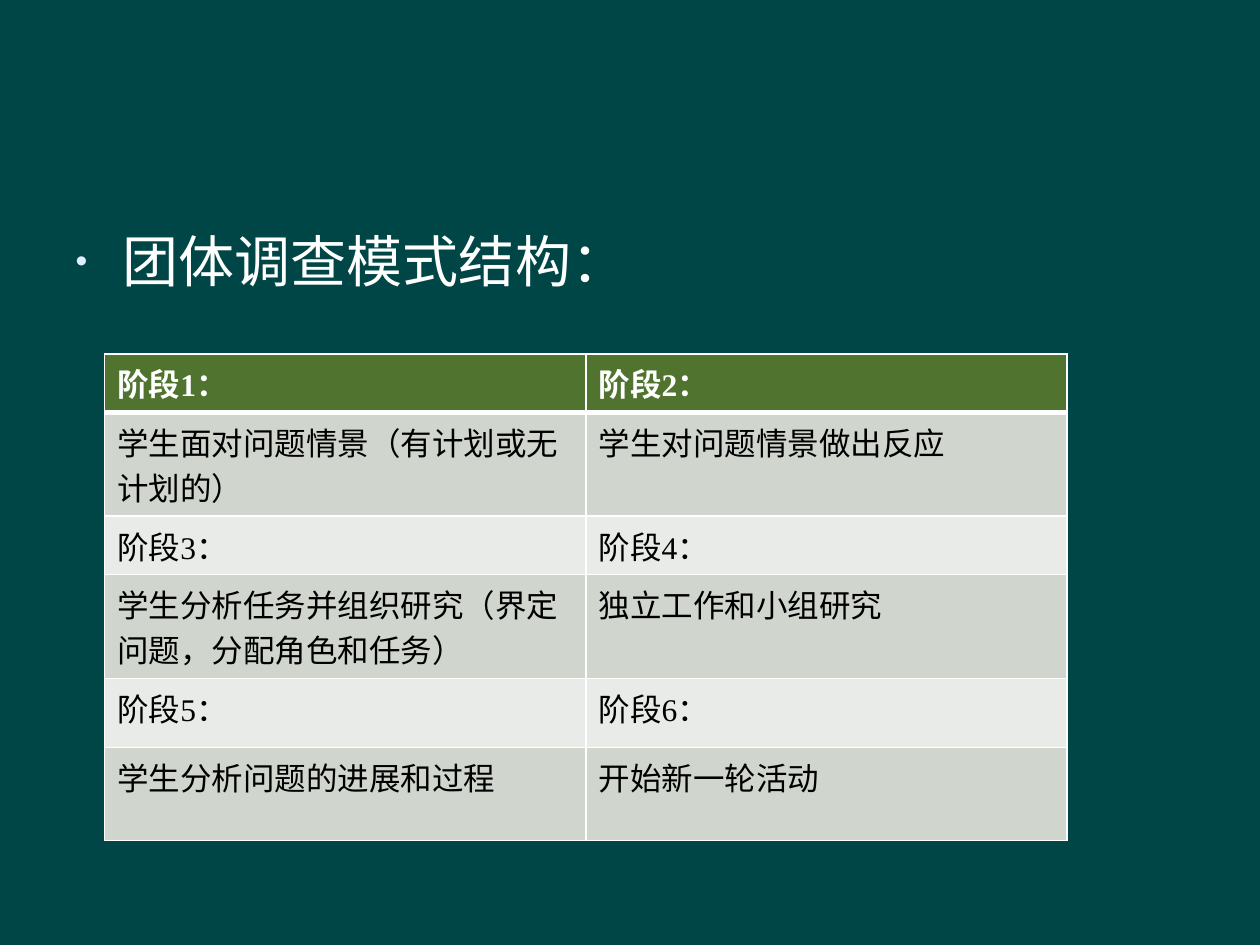
import pptx
import pptx.util
import pptx.dml.color
import pptx.oxml
import pptx.oxml.ns

Pt = pptx.util.Pt
FACE = "Times New Roman"
HUES = {"back": "004646", "white": "FFFFFF", "black": "000000", "dot": "E1F0FF",
        "head": "50742F", "dark": "D0D6CD", "light": "E9EBE8"}
ROWS = [
    ("阶段1：", "阶段2："),
    ("学生面对问题情景（有计划或无计划的）", "学生对问题情景做出反应"),
    ("阶段3：", "阶段4："),
    ("学生分析任务并组织研究（界定问题，分配角色和任务）", "独立工作和小组研究"),
    ("阶段5：", "阶段6："),
    ("学生分析问题的进展和过程", "开始新一轮活动"),
]
HEIGHTS = [33, 59.4, 33, 59.4, 39.4, 53.2]


def tint(name):
    return pptx.dml.color.RGBColor.from_string(HUES[name])


def make(xml):
    ns = pptx.oxml.ns.nsdecls("a")
    return pptx.oxml.parse_xml(xml.replace(">", f" {ns}>", 1))


def style(para, size, hue, bold=False):
    font = para.font
    font.name, font.size, font.bold = FACE, Pt(size), bold
    font.color.rgb = tint(hue)


def add_list(slide, text):
    body = slide.placeholders[1]
    body.left, body.top, body.width, body.height = Pt(36), Pt(126), Pt(648), Pt(356.4)
    para = body.text_frame.paragraphs[0]
    para.text = text
    para.space_before = Pt(0)
    props = para._p.get_or_add_pPr()
    props.set("marL", str(Pt(27)))
    props.set("indent", str(-Pt(27)))
    for xml in (f'<a:buClr><a:srgbClr val="{HUES["dot"]}"/></a:buClr>',
                '<a:buSzPct val="60000"></a:buSzPct>',
                '<a:buChar char="•"></a:buChar>'):
        props.append(make(xml))
    style(para, 32, "white")


def add_edges(cell, top, low):
    props = cell._tc.get_or_add_tcPr()
    for spot, (side, wide) in enumerate(zip("LRTB", (1, 1, top, low))):
        props.insert(spot, make(
            f'<a:ln{side} w="{Pt(wide)}"><a:solidFill>'
            f'<a:srgbClr val="{HUES["white"]}"/></a:solidFill></a:ln{side}>'))


def add_grid(slide):
    frame = slide.shapes.add_table(len(ROWS), 2, Pt(59.8), Pt(202.3),
                                   Pt(550), Pt(sum(HEIGHTS)))
    grid = frame.table
    for row, (texts, high) in enumerate(zip(ROWS, HEIGHTS)):
        grid.rows[row].height = Pt(high)
        head = row == 0
        fill = "head" if head else "dark" if row % 2 else "light"
        for col, text in enumerate(texts):
            cell = grid.cell(row, col)
            cell.text = text
            cell.fill.solid()
            cell.fill.fore_color.rgb = tint(fill)
            # A thick rule parts the header from the rows below
            add_edges(cell, 3 if row == 1 else 1, 3 if head else 1)
            style(cell.text_frame.paragraphs[0], 18,
                  "white" if head else "black", head)


def main():
    deck = pptx.Presentation()
    deck.slide_width, deck.slide_height = Pt(720), Pt(540)
    slide = deck.slides.add_slide(deck.slide_layouts[1])
    slide.background.fill.solid()
    slide.background.fill.fore_color.rgb = tint("back")

    # The slide has no title
    title = slide.shapes.title._element
    title.getparent().remove(title)

    add_list(slide, "团体调查模式结构：")
    add_grid(slide)
    deck.save("out.pptx")


if __name__ == "__main__":
    main()
